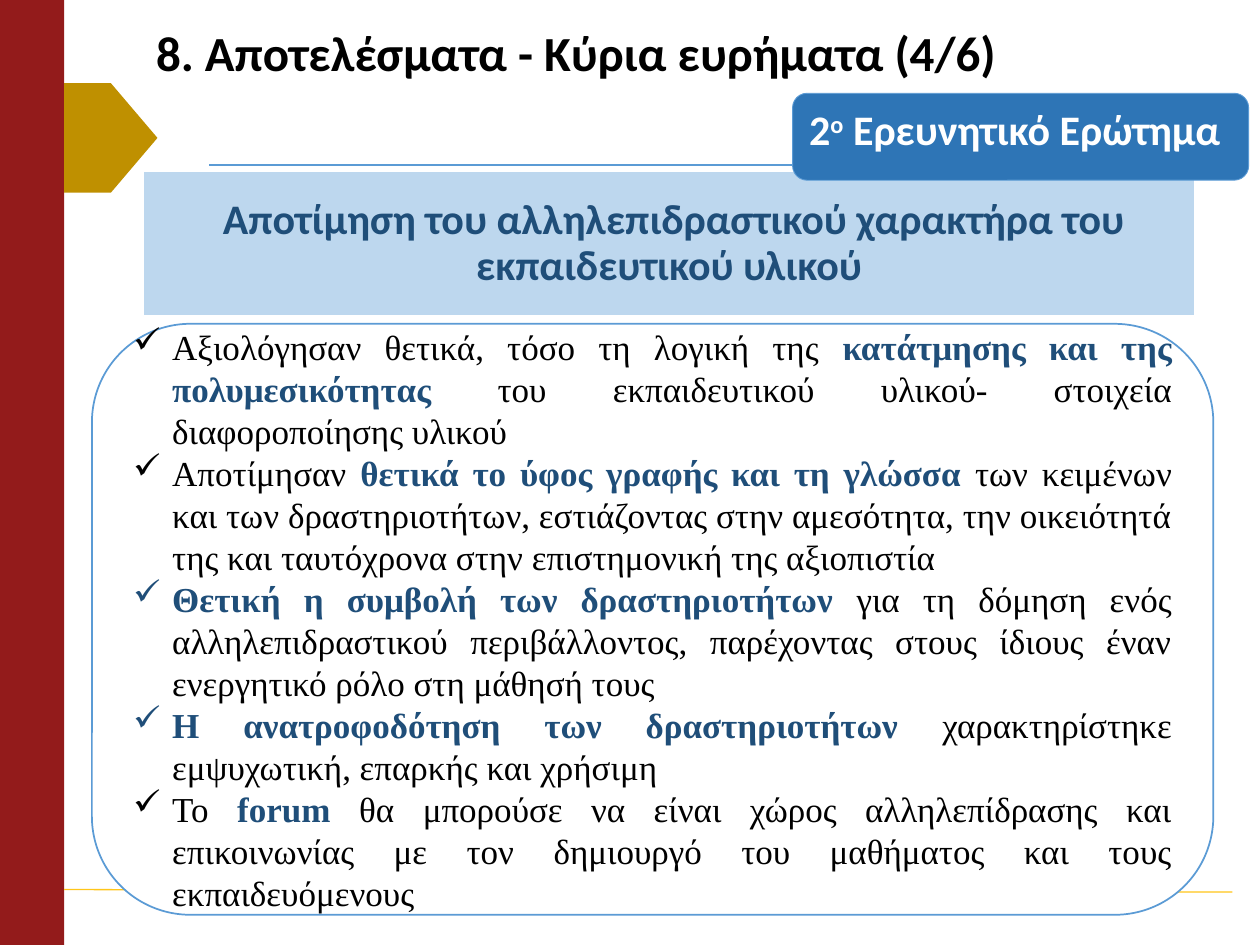
from lxml import etree
from pptx import Presentation
from pptx.dml.color import RGBColor
from pptx.enum.shapes import MSO_CONNECTOR, MSO_SHAPE
from pptx.enum.text import MSO_ANCHOR, PP_ALIGN
from pptx.oxml.ns import qn
from pptx.util import Inches, Pt

STRAIGHT = MSO_CONNECTOR.STRAIGHT
RECT, ROUNDED, PENTAGON = MSO_SHAPE.RECTANGLE, MSO_SHAPE.ROUNDED_RECTANGLE, MSO_SHAPE.PENTAGON
TOP, MIDDLE = MSO_ANCHOR.TOP, MSO_ANCHOR.MIDDLE
LEFT, CENTER, JUSTIFY = PP_ALIGN.LEFT, PP_ALIGN.CENTER, PP_ALIGN.JUSTIFY

COLORS = {
    "red": "931B1B", "gold": "BF9000", "yellow": "FFC61A", "blue": "5B9BD5",
    "badge": "2E75B6", "band": "BDD7EE", "navy": "1F4E79",
    "white": "FFFFFF", "black": "000000",
}

# Content
TITLE = "8. Αποτελέσματα - Κύρια ευρήματα (4/6) "
QUESTION = ("2", "ο", " Ερευνητικό Ερώτημα")
HEADING = " Αποτίμηση του αλληλεπιδραστικού χαρακτήρα του εκπαιδευτικού υλικού"
# Each finding: text before the emphasis, emphasis, text after it
FINDINGS = [
    ("Αξιολόγησαν θετικά, τόσο τη λογική της ",
     "κατάτμησης και της πολυμεσικότητας",
     " του εκπαιδευτικού υλικού- στοιχεία διαφοροποίησης υλικού"),
    ("Αποτίμησαν ",
     "θετικά το ύφος γραφής και τη γλώσσα ",
     "των κειμένων και των δραστηριοτήτων, εστιάζοντας στην αμεσότητα, την "
     "οικειότητά της και ταυτόχρονα στην επιστημονική της αξιοπιστία "),
    ("",
     "Θετική η συμβολή των δραστηριοτήτων ",
     "για τη δόμηση ενός αλληλεπιδραστικού περιβάλλοντος, παρέχοντας στους "
     "ίδιους έναν ενεργητικό ρόλο στη μάθησή τους"),
    ("",
     "Η ανατροφοδότηση των δραστηριοτήτων ",
     "χαρακτηρίστηκε εμψυχωτική, επαρκής και χρήσιμη"),
    ("Το ",
     "forum",
     " θα μπορούσε να είναι χώρος αλληλεπίδρασης και επικοινωνίας με τον "
     "δημιουργό του μαθήματος και τους εκπαιδευόμενους"),
]

prs = Presentation()
prs.slide_width, prs.slide_height = Inches(10), Inches(7.5)
slide = prs.slides.add_slide(prs.slide_layouts[6])


def rgb(name):
    return RGBColor.from_string(COLORS[name])


def add_panel(kind, box, fill, line=None, width=1):
    panel = slide.shapes.add_shape(kind, *map(Inches, box))
    panel.shadow.inherit = False
    panel.fill.solid()
    panel.fill.fore_color.rgb = rgb(fill)
    if line:
        panel.line.color.rgb = rgb(line)
        panel.line.width = Pt(width)
    else:
        panel.line.fill.background()
    return panel


def add_rule(start, end, color):
    rule = slide.shapes.add_connector(STRAIGHT, *map(Inches, start + end))
    rule.line.color.rgb = rgb(color)
    rule.line.width = Pt(0.75)
    etree.SubElement(rule.line._get_or_add_ln().getparent(), qn("a:effectLst"))


def set_font(font, name, size, color, bold):
    font.name, font.size, font.bold = name, Pt(size), bold
    font.color.rgb = rgb(color)


def first_paragraph(shape, anchor, align):
    frame = shape.text_frame
    frame.word_wrap = True
    frame.vertical_anchor = anchor
    paragraph = frame.paragraphs[0]
    paragraph.alignment = align
    return paragraph


def add_run(paragraph, text):
    run = paragraph.add_run()
    run.text = text
    return run


# Side bar, rules and marker
add_panel(RECT, (0, 0, 0.51, 7.5), "red")
add_rule((1.66, 1.31), (9.36, 1.31), "blue")
add_rule((0.51, 7.06), (9.78, 7.08), "yellow")
add_panel(PENTAGON, (0.51, 0.66, 0.74, 0.87), "gold")

# Title, with a line break that lifts it above the middle of its box
title_box = slide.shapes.add_textbox(*map(Inches, (1.14, 0.36, 8.5, 0.63)))
title = first_paragraph(title_box, MIDDLE, LEFT)
title.line_spacing = 0.9
set_font(title.font, "Calibri", 28, "black", True)
add_run(title, TITLE)
title.add_line_break()

# Heading band
band = add_panel(RECT, (1.14, 1.36, 8.34, 1.15), "band", "white")
heading = first_paragraph(band, MIDDLE, CENTER)
frame = band.text_frame
frame.margin_left = frame.margin_right = frame.margin_top = frame.margin_bottom = Inches(0.02)
heading.line_spacing = 0.9
set_font(heading.font, "Calibri", 24, "navy", True)
add_run(heading, HEADING)

# Research question badge
badge = add_panel(ROUNDED, (6.29, 0.74, 3.62, 0.69), "badge", "blue", 0.5)
question = first_paragraph(badge, TOP, LEFT)
set_font(question.font, "Calibri", 24, "white", True)
number, ordinal, label = [add_run(question, part) for part in QUESTION]
ordinal.font._element.set("baseline", "30000")

# Findings
card = add_panel(ROUNDED, (0.73, 2.57, 8.9, 4.69), "white", "blue")
for index, parts in enumerate(FINDINGS):
    finding = (card.text_frame.add_paragraph() if index
               else first_paragraph(card, MIDDLE, JUSTIFY))
    finding.alignment = JUSTIFY
    finding.line_spacing = Pt(24)
    properties = finding._p.get_or_add_pPr()
    properties.set("marL", str(Inches(0.31)))
    properties.set("indent", str(-Inches(0.31)))
    etree.SubElement(properties, qn("a:buChar"), char="✓")
    for text, emphasized in zip(parts, (False, True, False)):
        if text:
            set_font(add_run(finding, text).font, "Times New Roman", 20,
                     "navy" if emphasized else "black", emphasized)

prs.save("out.pptx")
